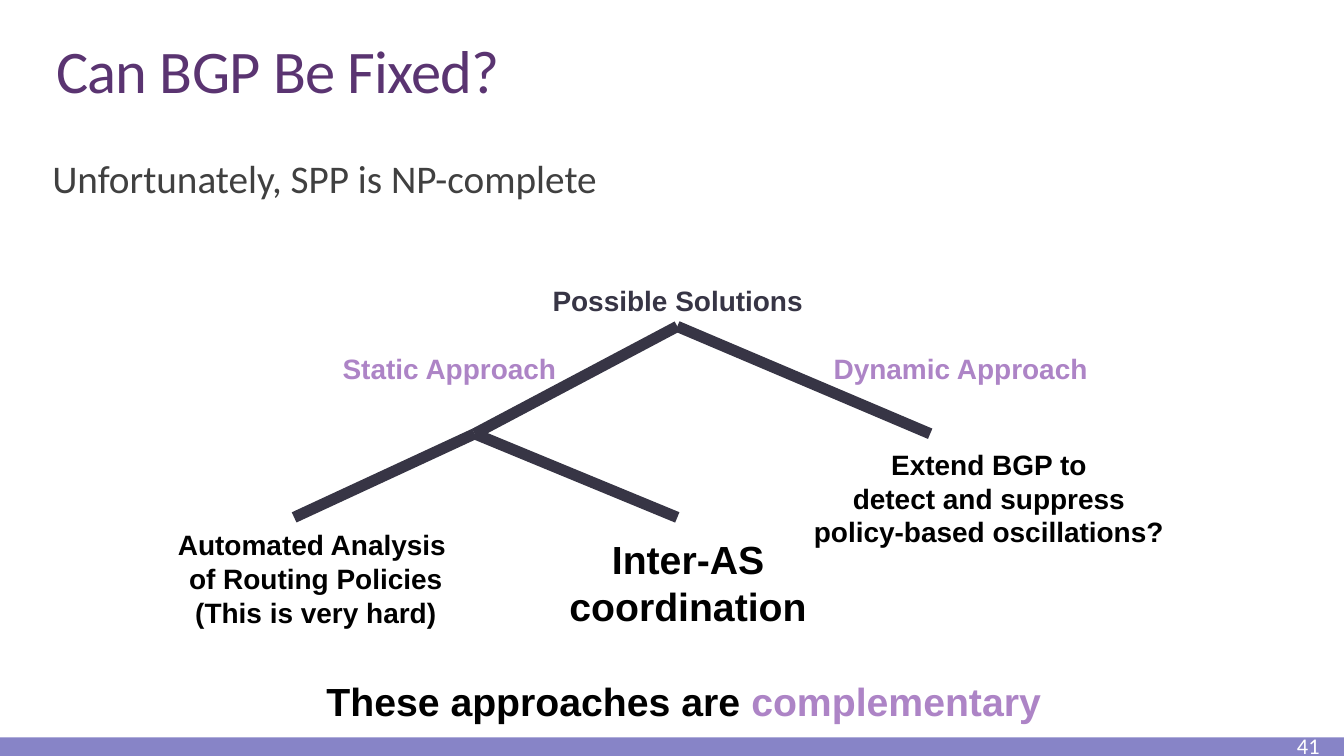
from dataclasses import dataclass
from typing import NamedTuple

from lxml.etree import SubElement
from pptx import Presentation
from pptx.dml.color import RGBColor as RGB
from pptx.enum.shapes import MSO_CONNECTOR as Conn, MSO_SHAPE as Shape
from pptx.enum.text import MSO_ANCHOR as Anchor, MSO_AUTO_SIZE as Fit, PP_ALIGN as Align
from pptx.oxml.ns import qn
from pptx.util import Cm, Pt


@dataclass(frozen=True)
class Theme:
    heading_font: str = "Calibri"
    label_font: str = "Arial"
    title: RGB = RGB(0x5A, 0x34, 0x71)
    body: RGB = RGB(0x40, 0x40, 0x40)
    accent: RGB = RGB(0xAD, 0x84, 0xC6)
    branch: RGB = RGB(0x37, 0x35, 0x45)
    footer: RGB = RGB(0x87, 0x84, 0xC7)
    black: RGB = RGB(0, 0, 0)
    white: RGB = RGB(255, 255, 255)
    title_size: float = 32.4
    large: float = 21
    label: float = 15
    number: float = 12
    branch_width: float = 6


class Box(NamedTuple):
    left: float
    top: float
    width: float
    height: float


class Point(NamedTuple):
    x: float
    y: float


@dataclass(frozen=True)
class Label:
    text: str
    box: Box
    color: RGB
    size: float
    wrap: bool = False


T = Theme()

# Tree nodes, in centimetres
ROOT = Point(12.8, 6.17)
STATIC = Point(8.97, 8.2)
DYNAMIC = Point(17.58, 8.2)
ANALYSIS = Point(5.56, 9.78)
COORDINATION = Point(12.8, 9.78)
BRANCHES = [(ROOT, STATIC), (ROOT, DYNAMIC), (STATIC, ANALYSIS), (STATIC, COORDINATION)]

LABELS = [
    Label("Possible Solutions", Box(9.8, 5.26, 6.02, 0.84), T.branch, T.label, True),
    Label("Static Approach", Box(6.07, 6.55, 4.85, 0.84), T.accent, T.label, True),
    Label("Dynamic Approach", Box(15.54, 6.55, 5.23, 0.84), T.accent, T.label),
    Label("Automated Analysis \nof Routing Policies\n(This is very hard)",
          Box(3.15, 9.88, 5.64, 2.11), T.black, T.label),
    Label("Inter-AS\ncoordination", Box(10.54, 10.01, 4.93, 1.98), T.black, T.large),
    Label("Extend BGP to\ndetect and suppress\npolicy-based oscillations?",
          Box(15.16, 8.36, 7.06, 2.11), T.black, T.label),
]
CONCLUSION = Label("These approaches are ", Box(5.99, 12.7, 14, 1.09), T.black, T.large)


def style(font, name: str, size: float, color: RGB, bold: bool = False) -> None:
    font.name, font.size, font.bold = name, Pt(size), bold
    font.color.rgb = color


def add_text(s, text: str, box: Box, wrap: bool = True):
    tf = s.shapes.add_textbox(*map(Cm, box)).text_frame
    tf.word_wrap = wrap
    tf.text = text
    return tf


def add_label(s, label: Label, align: Align = Align.CENTER):
    tf = add_text(s, label.text, label.box, label.wrap)
    tf.auto_size = Fit.SHAPE_TO_FIT_TEXT
    tf.margin_left = tf.margin_right = Cm(0.18)
    tf.margin_top = tf.margin_bottom = Cm(0.1)
    for p in tf.paragraphs:
        p.alignment = align
        for r in p.runs:
            style(r.font, T.label_font, label.size, label.color, True)
    return tf


def add_branch(s, start: Point, end: Point) -> None:
    line = s.shapes.add_connector(Conn.STRAIGHT, *map(Cm, start + end))
    line.line.color.rgb = T.branch
    line.line.width = Pt(T.branch_width)
    SubElement(line._element.spPr, qn("a:effectLst"))


def add_title(s, text: str, box: Box) -> None:
    sp = s.shapes.title
    sp.left, sp.top, sp.width, sp.height = map(Cm, box)
    tf = sp.text_frame
    tf.text = text
    tf.auto_size, tf.vertical_anchor = Fit.NONE, Anchor.BOTTOM
    p = tf.paragraphs[0]
    p.alignment, p.line_spacing = Align.LEFT, 0.85
    r = p.runs[0]
    style(r.font, T.heading_font, T.title_size, T.title)
    r.font._element.set("spc", "-40")  # slightly tightened letters


def add_body(s, text: str, box: Box) -> None:
    tf = add_text(s, text, box)
    tf.margin_left, tf.margin_right = Cm(0.18), 0
    p = tf.paragraphs[0]
    p.line_spacing = 0.9
    style(p.runs[0].font, T.heading_font, T.large, T.body)


def add_footer(s, number: str) -> None:
    bar = s.shapes.add_shape(Shape.RECTANGLE, *map(Cm, Box(0, 13.94, 25.4, 0.35)))
    bar.shadow.inherit = False
    bar.fill.solid()
    bar.fill.fore_color.rgb = T.footer
    bar.line.fill.background()
    tf = add_text(s, number, Box(22.45, 13.87, 2.74, 0.43))
    tf.vertical_anchor = Anchor.MIDDLE
    p = tf.paragraphs[0]
    p.alignment = Align.RIGHT
    style(p.runs[0].font, T.heading_font, T.number, T.white)


def main() -> None:
    prs = Presentation()
    prs.slide_width, prs.slide_height = Cm(25.4), Cm(14.29)
    s = prs.slides.add_slide(prs.slide_layouts[5])

    # Heading and footer
    add_footer(s, "41")
    add_title(s, "Can BGP Be Fixed?", Box(0.81, 0.61, 24.08, 1.52))
    add_body(s, "Unfortunately, SPP is NP-complete", Box(0.81, 2.9, 24.08, 9.98))

    # Solution tree
    for start, end in BRANCHES:
        add_branch(s, start, end)
    for label in LABELS:
        add_label(s, label)

    # Conclusion with its highlighted last word
    tf = add_label(s, CONCLUSION, Align.LEFT)
    r = tf.paragraphs[0].add_run()
    r.text = "complementary"
    style(r.font, T.label_font, T.large, T.accent, True)

    prs.save("out.pptx")


if __name__ == "__main__":
    main()
